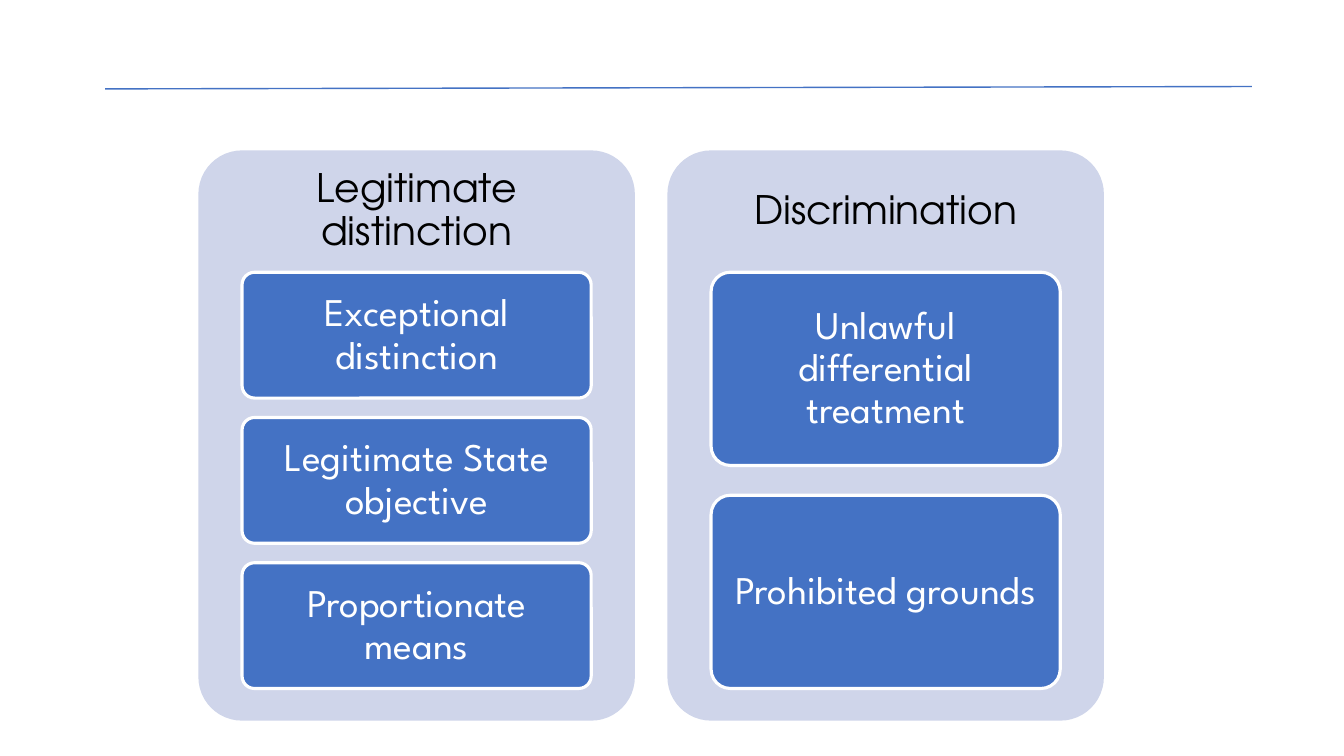
from pptx import Presentation
from pptx.dml.color import RGBColor
from pptx.enum.shapes import MSO_CONNECTOR, MSO_SHAPE
from pptx.enum.text import MSO_ANCHOR, PP_ALIGN
from pptx.oxml.ns import qn
from pptx.util import Cm, Pt
from lxml.etree import SubElement

# Content: heading and boxes of each panel
PANELS = [
    ("Legitimate distinction",
     ["Exceptional distinction", "Legitimate State objective", "Proportionate means"]),
    ("Discrimination",
     ["Unlawful differential treatment", "Prohibited grounds"]),
]

BLUE = RGBColor(0x44, 0x72, 0xC4)
PALE = RGBColor(0xCF, 0xD5, 0xEA)
BLACK = RGBColor(0, 0, 0)
WHITE = RGBColor(0xFF, 0xFF, 0xFF)
HEAD_FONT = "TeX Gyre Adventor"
BOX_FONT = "League Spartan"

# Layout in centimetres
LEFT, TOP = 5.0, 3.79
WIDTH, HEIGHT = 11.0, 14.37
PITCH = 11.82
HEAD = 3.07
STACK = 10.49
BOX_WIDTH = 0.8 * WIDTH
GAP_RATIO = 2 / 13


def write(shape, text, font, color, pad_x, pad_y):
    frame = shape.text_frame
    frame.text = text
    frame.word_wrap = True
    frame.vertical_anchor = MSO_ANCHOR.MIDDLE
    frame.margin_left = frame.margin_right = Cm(pad_x)
    frame.margin_top = frame.margin_bottom = Cm(pad_y)
    para = frame.paragraphs[0]
    para.alignment = PP_ALIGN.CENTER
    para.line_spacing = 0.9
    para.font.size = Pt(28)
    para.font.name = font
    para.font.color.rgb = color


def add_round(x, y, width, height, fill):
    shape = slide.shapes.add_shape(
        MSO_SHAPE.ROUNDED_RECTANGLE, Cm(x), Cm(y), Cm(width), Cm(height))
    shape.adjustments[0] = 0.1
    shape.shadow.inherit = False
    shape.fill.solid()
    shape.fill.fore_color.rgb = fill
    shape.line.fill.background()
    return shape


deck = Presentation()
deck.slide_width, deck.slide_height = Cm(33.87), Cm(19.05)
slide = deck.slides.add_slide(deck.slide_layouts[6])

# Rule across the top
rule = slide.shapes.add_connector(
    MSO_CONNECTOR.STRAIGHT, Cm(2.65), Cm(2.24), Cm(31.55), Cm(2.18))
rule.line.color.rgb = BLUE
rule.line.width = Pt(1)
SubElement(rule._element.spPr, qn("a:effectLst"))

for col, (title, items) in enumerate(PANELS):
    # Panel and its heading
    x = LEFT + col * PITCH
    add_round(x, TOP, WIDTH, HEIGHT, PALE)
    head = slide.shapes.add_textbox(Cm(x), Cm(TOP), Cm(WIDTH), Cm(HEAD))
    write(head, title, HEAD_FONT, BLACK, 0.51, 0.51)

    # Boxes share the stack height, with gaps in proportion
    count = len(items)
    height = STACK / (count + (count - 1) * GAP_RATIO)
    for row, item in enumerate(items):
        y = TOP + HEAD + row * height * (1 + GAP_RATIO)
        box = add_round(x + (WIDTH - BOX_WIDTH) / 2, y, BOX_WIDTH, height, BLUE)
        box.line.color.rgb = WHITE
        box.line.width = Pt(2.25)
        write(box, item, BOX_FONT, WHITE, 0.23, 0.17)

deck.save("out.pptx")
